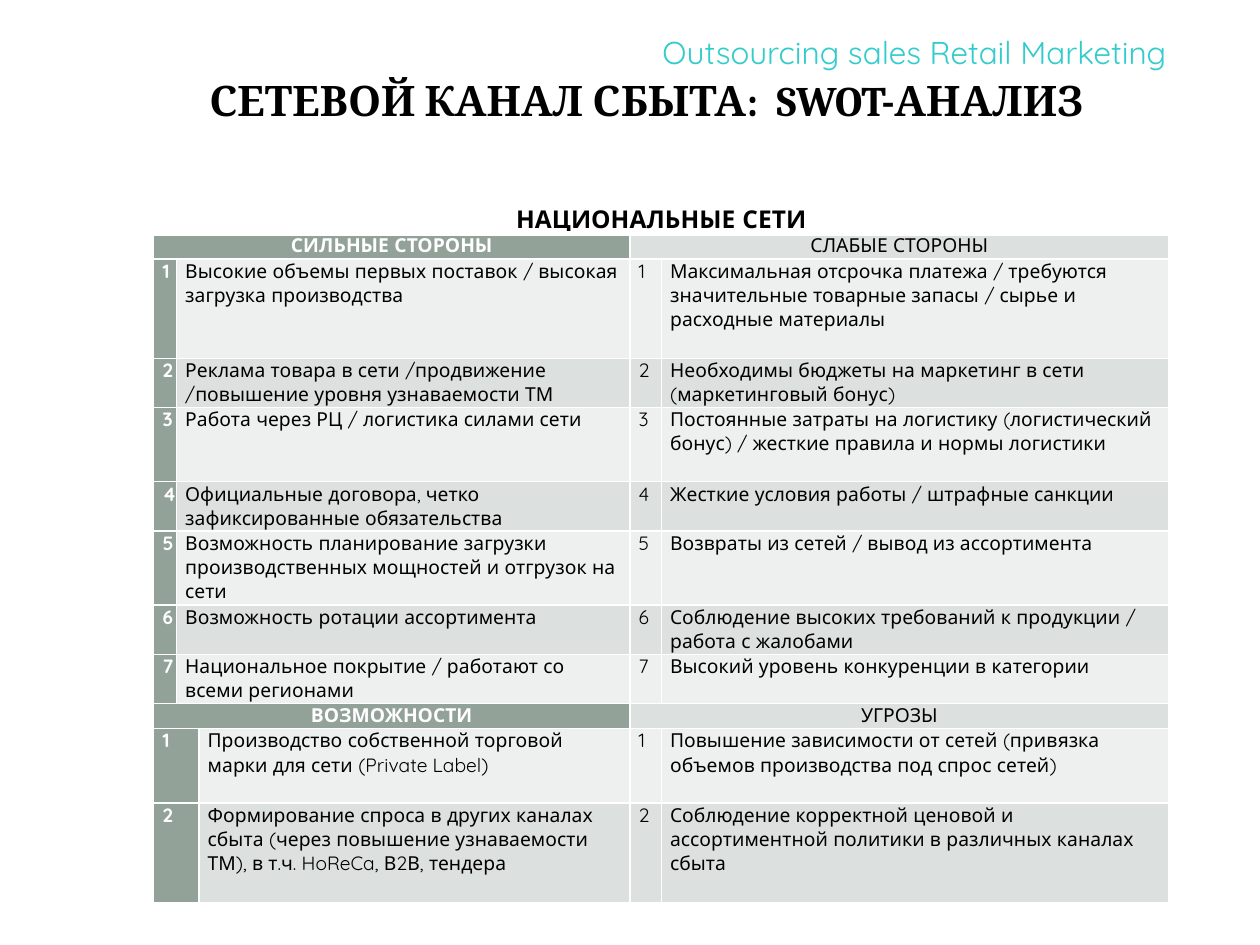
from lxml import etree
from pptx import Presentation
from pptx.dml.color import RGBColor
from pptx.enum.text import MSO_ANCHOR, MSO_AUTO_SIZE, PP_ALIGN
from pptx.oxml.ns import qn
from pptx.util import Inches, Pt

CENTER, LEFT = PP_ALIGN.CENTER, PP_ALIGN.LEFT
MIDDLE = MSO_ANCHOR.MIDDLE
FIT_SHAPE, FIT_NONE = MSO_AUTO_SIZE.SHAPE_TO_FIT_TEXT, MSO_AUTO_SIZE.NONE

COLORS = {"white": "FFFFFF", "black": "000000", "teal": "33CCCC",
          "green": "93A299", "dark_band": "DCE0DE", "light_band": "EEF0EF"}
TITLE = "СЕТЕВОЙ КАНАЛ СБЫТА:  SWOT-АНАЛИЗ"
TAGLINE = "Outsourcing sales Retail Marketing"
TABLE_TITLE = "НАЦИОНАЛЬНЫЕ СЕТИ"
SECTIONS = [
    {"heads": ("СИЛЬНЫЕ СТОРОНЫ", "СЛАБЫЕ СТОРОНЫ"), "text_column": 1, "items": [
        ("Высокие объемы первых поставок / высокая загрузка производства",
         "Максимальная отсрочка платежа / требуются значительные товарные запасы / сырье и расходные материалы"),
        ("Реклама товара в сети /продвижение /повышение уровня узнаваемости ТМ",
         "Необходимы бюджеты на маркетинг в сети (маркетинговый бонус)"),
        ("Работа через РЦ / логистика силами сети",
         "Постоянные затраты на логистику (логистический бонус) / жесткие правила и нормы логистики"),
        ("Официальные договора, четко зафиксированные обязательства",
         "Жесткие условия работы / штрафные санкции"),
        ("Возможность планирование загрузки производственных мощностей и отгрузок на сети",
         "Возвраты из сетей / вывод из ассортимента"),
        ("Возможность ротации ассортимента",
         "Соблюдение высоких требований к продукции / работа с жалобами"),
        ("Национальное покрытие / работают со всеми регионами",
         "Высокий уровень конкуренции в категории")]},
    {"heads": ("ВОЗМОЖНОСТИ", "УГРОЗЫ"), "text_column": 2, "items": [
        ("Производство собственной торговой марки для сети (Private Label)",
         "Повышение зависимости от сетей (привязка объемов производства под спрос сетей)"),
        ("Формирование спроса в других каналах сбыта (через повышение узнаваемости ТМ), в т.ч. HoReCa, В2В, тендера",
         "Соблюдение корректной ценовой и ассортиментной политики в различных каналах сбыта")]},
]
COLUMN_WIDTHS = [0.18, 0.1, 3.42, 0.25, 4.03]
ROW_HEIGHTS = [0.2, 0.2, 0.79, 0.39, 0.59, 0.39, 0.59, 0.39, 0.39, 0.2, 0.59, 0.79]
CELL_FORMAT = {"margin_left": Inches(0.07), "margin_right": Inches(0.07),
               "margin_top": 0, "margin_bottom": 0}


def set_attributes(target, values):
    for name, value in values.items():
        setattr(target, name, value)


def write(frame, text, size, color="black", bold=False, font="Quicksand", align=LEFT):
    para = frame.paragraphs[0]
    para.alignment = align
    span = para.add_run()
    span.text = text
    set_attributes(span.font, {"size": Pt(size), "bold": bold, "name": font})
    span.font.color.rgb = RGBColor.from_string(COLORS[color])


def add_borders(cell, bottom):
    properties = cell._tc.get_or_add_tcPr()
    for side, width in (("L", 1), ("R", 1), ("T", 1), ("B", bottom)):
        line = etree.SubElement(properties, qn("a:ln" + side), w=str(Pt(width)))
        fill = etree.SubElement(line, qn("a:solidFill"))
        etree.SubElement(fill, qn("a:srgbClr"), val=COLORS["white"])


def fill_cell(table, row, first, last, text, fill, size=11, bottom=1, **style):
    for column in range(first, last + 1):
        cell = table.cell(row, column)
        add_borders(cell, bottom)
        cell.fill.solid()
        cell.fill.fore_color.rgb = RGBColor.from_string(COLORS[fill])
        set_attributes(cell, CELL_FORMAT)
    cell = table.cell(row, first)
    if last > first:
        cell.merge(table.cell(row, last))
    write(cell.text_frame, text, size, **style)


def fill_table(table):
    accent = {"color": "white", "bold": True}
    fill_cell(table, 0, 0, 4, TABLE_TITLE, "white", 14, 3, bold=True, align=CENTER)
    row = 1
    for section in SECTIONS:
        left_head, right_head = section["heads"]
        start = section["text_column"]
        fill_cell(table, row, 0, 2, left_head, "green", align=CENTER, **accent)
        fill_cell(table, row, 3, 4, right_head, "dark_band", align=CENTER)
        for number, (left, right) in enumerate(section["items"], 1):
            band = "light_band" if number % 2 else "dark_band"
            fill_cell(table, row + number, 0, start - 1, str(number), "green", **accent)
            fill_cell(table, row + number, start, 2, left, band)
            fill_cell(table, row + number, 3, 3, str(number), band)
            fill_cell(table, row + number, 4, 4, right, band)
        row += len(section["items"]) + 1


def main():
    deck = Presentation()
    set_attributes(deck, {"slide_width": Inches(10), "slide_height": Inches(7.5)})
    page = deck.slides.add_slide(deck.slide_layouts[5])

    title = page.shapes.title
    set_attributes(title, {"left": Inches(0.25), "top": Inches(0.52),
                           "width": Inches(9.76), "height": Inches(0.54)})
    set_attributes(title.text_frame, {"vertical_anchor": MIDDLE, "word_wrap": True,
                                      "auto_size": FIT_NONE})
    write(title.text_frame, TITLE, 24, bold=True, font="Cambria", align=CENTER)

    box = page.shapes.add_textbox(Inches(5.16), Inches(0.21), Inches(4.57), Inches(0.4))
    set_attributes(box.text_frame, {"word_wrap": True, "auto_size": FIT_SHAPE})
    write(box.text_frame, TAGLINE, 18, "teal")

    table = page.shapes.add_table(
        len(ROW_HEIGHTS), len(COLUMN_WIDTHS), Inches(1.22), Inches(1.62),
        Inches(sum(COLUMN_WIDTHS)), Inches(sum(ROW_HEIGHTS))).table
    for column, width in zip(table.columns, COLUMN_WIDTHS):
        column.width = Inches(width)
    for row, height in zip(table.rows, ROW_HEIGHTS):
        row.height = Inches(height)
    fill_table(table)
    deck.save("out.pptx")


if __name__ == "__main__":
    main()
